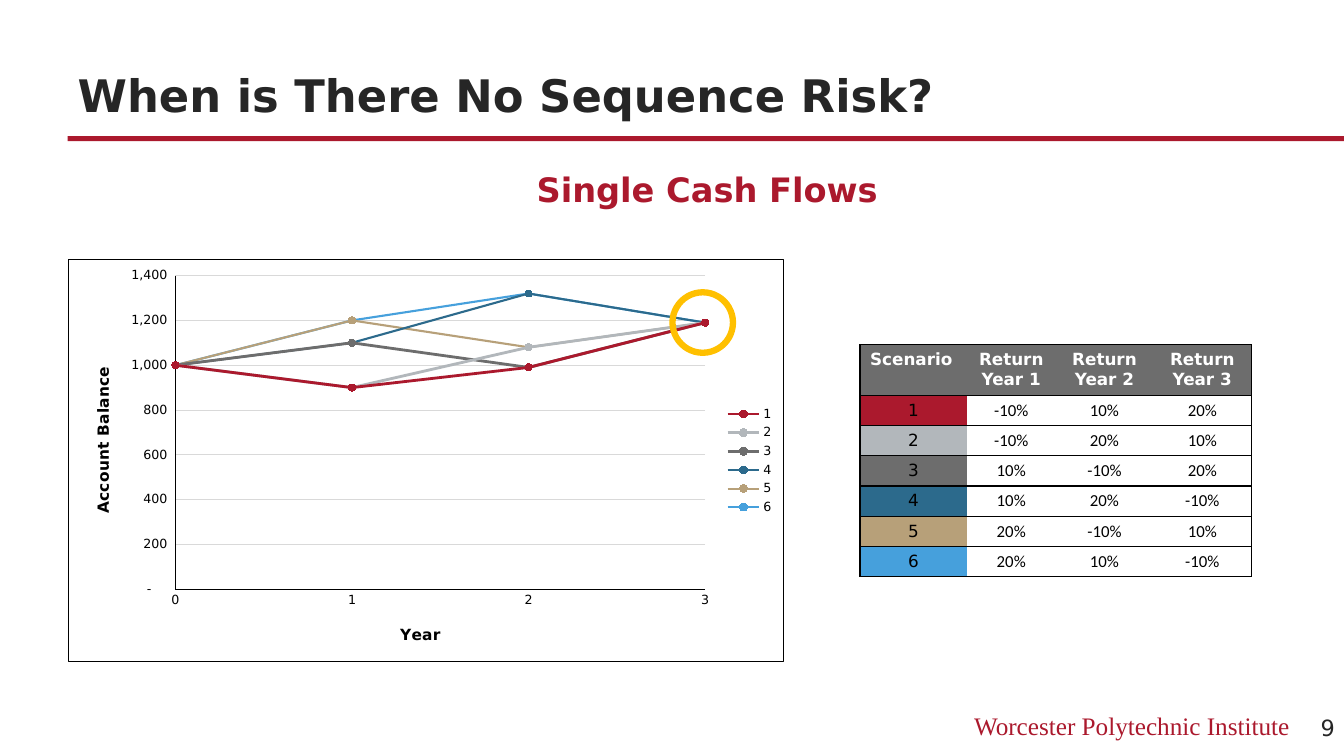
from itertools import accumulate

from lxml.etree import SubElement
from pptx import Presentation
from pptx.chart.data import XyChartData
from pptx.dml.color import RGBColor
from pptx.enum.chart import XL_CHART_TYPE, XL_LEGEND_POSITION, XL_MARKER_STYLE, XL_TICK_MARK
from pptx.enum.shapes import MSO_SHAPE
from pptx.enum.text import MSO_ANCHOR, PP_ALIGN
from pptx.oxml import parse_xml
from pptx.oxml.ns import nsdecls, qn
from pptx.util import Inches, Pt

COLORS = {"crimson": "AB192D", "ink": "262626", "black": "000000", "white": "FFFFFF",
          "gray": "6D6D6D", "grid": "D9D9D9", "gold": "FFC000", "silver": "B2B7BB",
          "teal": "2C6A8C", "tan": "B7A079", "sky": "46A0DC"}
SANS = "DejaVu Sans"
SCENARIOS = [("crimson", (-10, 10, 20), 2), ("silver", (-10, 20, 10), 2),
             ("gray", (10, -10, 20), 2), ("teal", (10, 20, -10), 1.5),
             ("tan", (20, -10, 10), 1.5), ("sky", (20, 10, -10), 1.5)]
NO_TABLE_STYLE = "{2D5ABB26-0587-4C30-8999-92F81FD0307C}"


def rgb(name):
    return RGBColor.from_string(COLORS[name])


def style_font(font, size, color="black", name=SANS, bold=False):
    font.size, font.name, font.bold = Pt(size), name, bold
    font.color.rgb = rgb(color)


def style_line(line, color, width):
    line.color.rgb = rgb(color)
    line.width = Pt(width)


def add_text(page, box, text, size, color, name=SANS, bold=False, align=PP_ALIGN.LEFT):
    shape = page.shapes.add_textbox(*map(Inches, box))
    frame = shape.text_frame
    frame.word_wrap = True
    para = frame.paragraphs[0]
    para.text = text
    para.alignment = align
    style_font(para.font, size, color, name, bold)
    return frame


def add_heading(page, box):
    left, top, width, height = box
    title = page.shapes.title
    title.left, title.top, title.width, title.height = map(Inches, box)
    frame = title.text_frame
    frame.text = "When is There No Sequence Risk?"
    frame.vertical_anchor = MSO_ANCHOR.BOTTOM
    para = frame.paragraphs[0]
    para.alignment = PP_ALIGN.LEFT
    style_font(para.font, 32, "ink", bold=True)
    rule = page.shapes.add_shape(MSO_SHAPE.RECTANGLE, Inches(left), Inches(top + 0.97),
                                 Inches(13.33 - left), Inches(0.05))
    rule.shadow.inherit = False
    rule.fill.solid()
    rule.fill.fore_color.rgb = rgb("crimson")
    rule.line.fill.background()


def add_subtitle(page, box):
    frame = add_text(page, box, "Single Cash Flows", 24, "crimson", bold=True,
                     align=PP_ALIGN.CENTER)
    para = frame.paragraphs[0]
    para.line_spacing = 0.95
    properties = para._p.get_or_add_pPr()
    properties.set("marL", str(Inches(0.7)))
    properties.set("indent", "0")


def set_layout(element, index, **fractions):
    for old in element.findall(qn("c:layout")):
        element.remove(old)
    layout = parse_xml(f"<c:layout {nsdecls('c')}><c:manualLayout/></c:layout>")
    manual = layout[0]
    if "w" in fractions:
        SubElement(manual, qn("c:layoutTarget")).set("val", "inner")
    for side in "xy":
        SubElement(manual, qn(f"c:{side}Mode")).set("val", "edge")
    for side, fraction in fractions.items():
        SubElement(manual, qn(f"c:{side}")).set("val", str(fraction))
    element.insert(index, layout)


def style_axis(axis, title, maximum, step, number_format, x, y):
    axis.minimum_scale, axis.maximum_scale, axis.major_unit = 0, maximum, step
    axis.major_tick_mark = axis.minor_tick_mark = XL_TICK_MARK.NONE
    axis.has_major_gridlines = False
    labels = axis.tick_labels
    labels.number_format = number_format
    labels.number_format_is_linked = False
    style_font(labels.font, 9)
    style_line(axis.format.line, "black", 0.75)
    frame = axis.axis_title.text_frame
    frame.text = title
    style_font(frame.paragraphs[0].font, 11, bold=True)
    set_layout(axis.axis_title._element, 1, x=x, y=y)


def add_balance_chart(page, box):
    data = XyChartData()
    for number, (_, returns, _) in enumerate(SCENARIOS, 1):
        series = data.add_series(str(number))
        balances = accumulate(returns, lambda balance, rate: balance * (100 + rate) / 100,
                              initial=1000)
        for year, balance in enumerate(balances):
            series.add_data_point(year, round(balance, -1))
    chart = page.shapes.add_chart(XL_CHART_TYPE.XY_SCATTER_LINES, *map(Inches, box), data).chart
    chart.has_title = False
    style_font(chart.font, 10)
    chart.has_legend = True
    chart.legend.position = XL_LEGEND_POSITION.RIGHT
    chart.legend.include_in_layout = False
    style_font(chart.legend.font, 9)
    plot = chart.plots[0]
    plot.vary_by_categories = False
    for series, (color, _, width) in zip(plot.series, SCENARIOS):
        style_line(series.format.line, color, width)
        marker = series.marker
        marker.style, marker.size = XL_MARKER_STYLE.CIRCLE, 5
        marker.format.fill.solid()
        marker.format.fill.fore_color.rgb = rgb(color)
        style_line(marker.format.line, color, 0.75)
    style_axis(chart.category_axis, "Year", 3, 1, "0", 0.46, 0.9)
    balance_axis = chart.value_axis
    style_axis(balance_axis, "Account Balance", 1400, 200,
               '_(* #,##0_);_(* (#,##0);_(* "-"??_);_(@_)', 0.03, 0.26)
    balance_axis.axis_title.text_frame._txBody.bodyPr.set("rot", "-5400000")
    balance_axis.has_major_gridlines = True
    style_line(balance_axis.major_gridlines.format.line, "grid", 0.75)
    area = chart._chartSpace.find(qn("c:chart"))
    set_layout(area.find(qn("c:plotArea")), 0, x=0.15, y=0.04, w=0.74, h=0.78)
    area.addnext(parse_xml(
        f'<c:spPr {nsdecls("c", "a")}><a:noFill/><a:ln w="{Pt(0.75)}"><a:solidFill>'
        f'<a:srgbClr val="{COLORS["black"]}"/></a:solidFill></a:ln></c:spPr>'))


def add_final_balance_ring(page, box):
    ring = page.shapes.add_shape(MSO_SHAPE.OVAL, *map(Inches, box))
    ring.shadow.inherit = False
    ring.fill.background()
    style_line(ring.line, "gold", 4.5)


def fill_cell(cell, text, fill, sides, color="black", name=SANS, bold=False):
    for side in sides:
        cell._tc.get_or_add_tcPr().append(parse_xml(
            f'<a:ln{side} {nsdecls("a")} w="{Pt(1)}"><a:solidFill>'
            f'<a:srgbClr val="{COLORS["black"]}"/></a:solidFill></a:ln{side}>'))
    cell.fill.solid()
    cell.fill.fore_color.rgb = rgb(fill)
    cell.text = text
    para = cell.text_frame.paragraphs[0]
    para.alignment = PP_ALIGN.CENTER
    style_font(para.font, 12, color, name, bold)


def add_returns_table(page, box):
    widths = (1.06, 0.88, 0.97, 0.97)
    table = page.shapes.add_table(len(SCENARIOS) + 1, len(widths), *map(Inches, box)).table
    table.first_row = table.horz_banding = False
    table._tbl.tblPr.find(qn("a:tableStyleId")).text = NO_TABLE_STYLE
    for column, width in zip(table.columns, widths):
        column.width = Inches(width)
    for index, row in enumerate(table.rows):
        row.height = Inches(0.3 if index else 0.46)
    borders = ("LTB", "TB", "TB", "RTB")
    headers = ["Scenario"] + [f"Return Year {year}" for year in (1, 2, 3)]
    for column, header in enumerate(headers):
        fill_cell(table.cell(0, column), header, "gray", borders[column], "white", bold=True)
    table.cell(0, 0).text_frame.paragraphs[0].alignment = PP_ALIGN.LEFT
    for number, (color, returns, _) in enumerate(SCENARIOS, 1):
        fill_cell(table.cell(number, 0), str(number), color, borders[0])
        table.cell(number, 0).vertical_anchor = MSO_ANCHOR.MIDDLE
        for year, rate in enumerate(returns, 1):
            cell = table.cell(number, year)
            fill_cell(cell, f"{rate}%", "white", borders[year], name="Calibri")
            cell.vertical_anchor = MSO_ANCHOR.MIDDLE
            cell.margin_left = cell.margin_right = cell.margin_top = cell.margin_bottom = 0


def add_footer(page, box):
    left, top, width, height = box
    add_text(page, (left, top, 4.89, height), "Worcester Polytechnic Institute", 18,
             "crimson", "Times New Roman", align=PP_ALIGN.RIGHT)
    number = add_text(page, (left + 5, top, width - 5, height), "9", 16, "ink")
    number.word_wrap = False
    number.vertical_anchor = MSO_ANCHOR.MIDDLE


def main():
    deck = Presentation()
    deck.slide_width, deck.slide_height = Inches(13.33), Inches(7.5)
    page = deck.slides.add_slide(deck.slide_layouts[5])
    add_heading(page, (0.67, 0.38, 12, 0.88))
    add_subtitle(page, (0.33, 1.66, 12.67, 0.5))
    add_balance_chart(page, (0.67, 2.57, 7.11, 4))
    add_final_balance_ring(page, (6.67, 2.9, 0.6, 0.6))
    add_returns_table(page, (8.53, 3.42, 3.88, 2.26))
    add_footer(page, (8, 7, 5.33, 0.43))
    deck.save("out.pptx")


if __name__ == "__main__":
    main()
